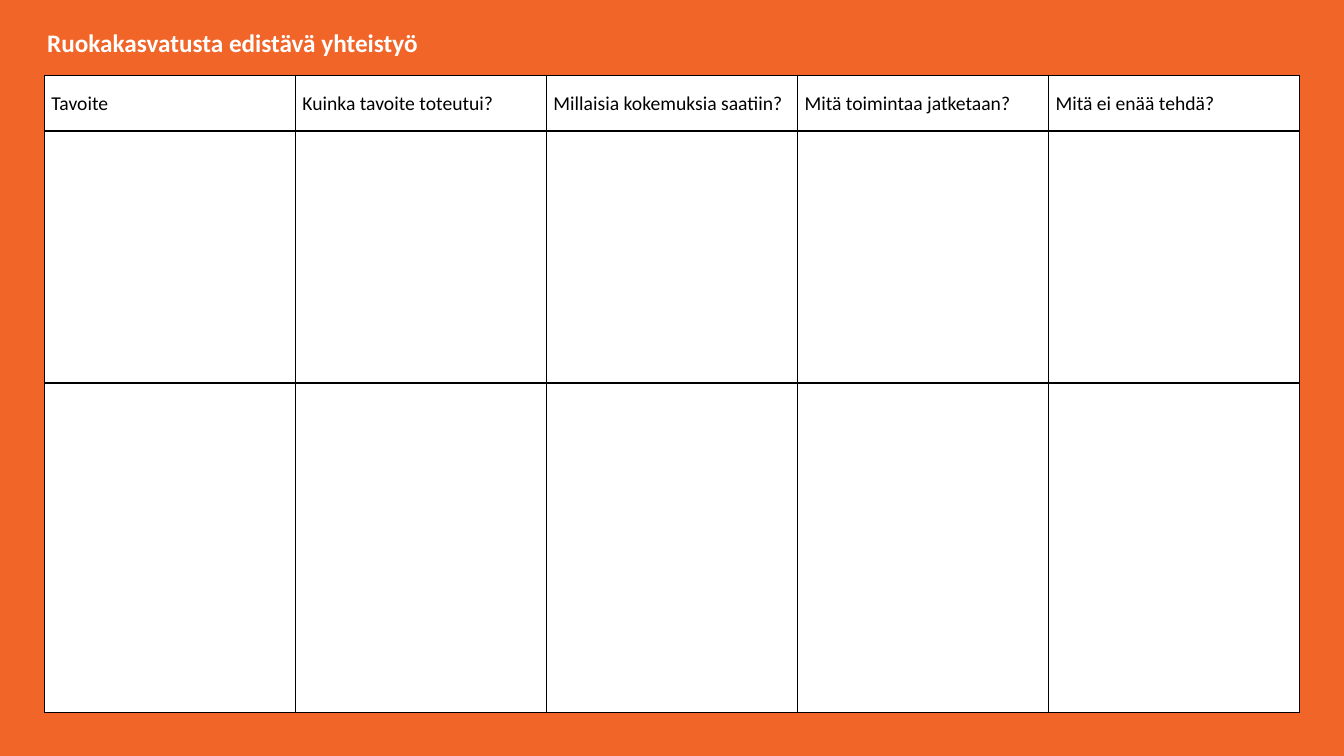
import pptx
import pptx.dml.color
import pptx.enum.text
import pptx.oxml.ns
import pptx.util
from lxml import etree

Inches = pptx.util.Inches
Pt = pptx.util.Pt

FONT = "Calibri"
ORANGE, WHITE, BLACK = "F26529", "FFFFFF", "000000"
TITLE = "Ruokakasvatusta edistävä yhteistyö"
HEADINGS = [
    "Tavoite",
    "Kuinka tavoite toteutui?",
    "Millaisia kokemuksia saatiin?",
    "Mitä toimintaa jatketaan?",
    "Mitä ei enää tehdä?",
]
TABLE_LEFT, TABLE_TOP = 0.44, 0.75
COLUMN_WIDTH = 2.49
ROW_HEIGHTS = [0.55, 2.5, 3.27]


def set_color(color_format, value):
    color_format.rgb = pptx.dml.color.RGBColor.from_string(value)


def set_fill(fill, value):
    fill.solid()
    set_color(fill.fore_color, value)


def add_span(para, text, size, color, bold=False):
    span = para.add_run()
    span.text = text
    span.font.name = FONT
    span.font.size = Pt(size)
    span.font.bold = bold
    set_color(span.font.color, color)


def set_borders(cell, color, width):
    """Draw a solid line on all four sides; call before filling the cell."""
    properties = cell._tc.get_or_add_tcPr()
    qn = pptx.oxml.ns.qn
    for side in ("lnL", "lnR", "lnT", "lnB"):
        line = etree.SubElement(properties, qn(f"a:{side}"), w=str(Pt(width)))
        solid = etree.SubElement(line, qn("a:solidFill"))
        etree.SubElement(solid, qn("a:srgbClr"), val=color)


def add_title(page, text):
    box = page.shapes.add_textbox(Inches(0.37), Inches(0.22), Inches(5.21), Inches(0.4))
    frame = box.text_frame
    frame.word_wrap = True
    frame.auto_size = pptx.enum.text.MSO_AUTO_SIZE.SHAPE_TO_FIT_TEXT
    add_span(frame.paragraphs[0], text, 18, WHITE, bold=True)


def format_cell(cell):
    cell.margin_left = cell.margin_right = Inches(0.07)
    cell.margin_top = cell.margin_bottom = 0
    cell.vertical_anchor = pptx.enum.text.MSO_ANCHOR.MIDDLE
    set_borders(cell, BLACK, 1)
    set_fill(cell.fill, WHITE)


def add_evaluation_table(page, headings):
    table = page.shapes.add_table(
        len(ROW_HEIGHTS), len(headings),
        Inches(TABLE_LEFT), Inches(TABLE_TOP),
        Inches(COLUMN_WIDTH * len(headings)), Inches(sum(ROW_HEIGHTS)),
    ).table
    table.first_row = table.horz_banding = False
    for column in table.columns:
        column.width = Inches(COLUMN_WIDTH)
    for row, height in zip(table.rows, ROW_HEIGHTS):
        row.height = Inches(height)
    for cell in table.iter_cells():
        format_cell(cell)
    for cell, heading in zip(table.rows[0].cells, headings):
        para = cell.text_frame.paragraphs[0]
        para.line_spacing = 1.07
        para.space_after = Pt(8)
        add_span(para, heading, 14, BLACK)


def main():
    deck = pptx.Presentation()
    deck.slide_width, deck.slide_height = Inches(13.33), Inches(7.5)
    page = deck.slides.add_slide(deck.slide_layouts[6])
    set_fill(page.background.fill, ORANGE)
    add_evaluation_table(page, HEADINGS)
    add_title(page, TITLE)
    deck.save("out.pptx")


if __name__ == "__main__":
    main()
